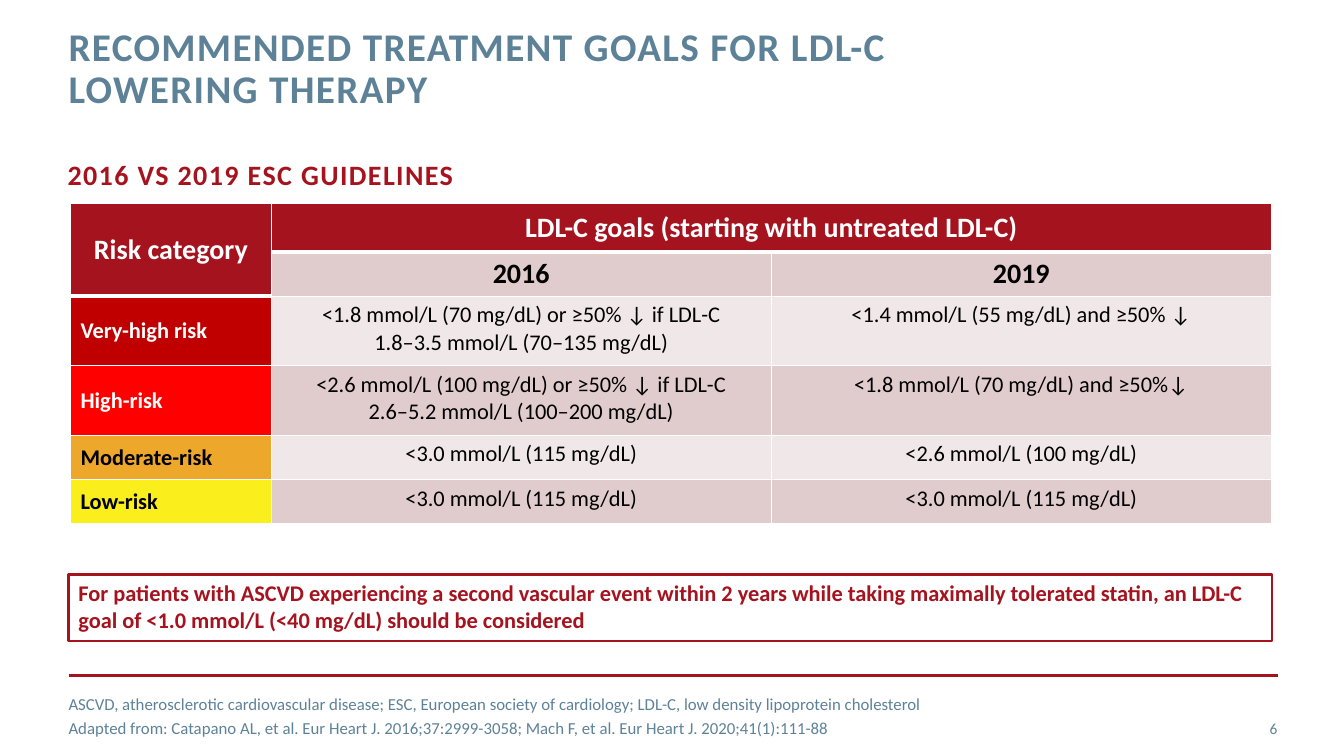
"""Builds a slide comparing the 2016 and 2019 LDL-C treatment goals."""
import pptx
import pptx.dml.color
import pptx.enum.shapes
import pptx.enum.text
import pptx.oxml
import pptx.oxml.ns
import pptx.util
from pptx.util import Inches

COLORS = {
    "crimson": "A5131F", "slate": "5D8298", "white": "FFFFFF", "black": "000000",
    "rose": "E1CCCD", "blush": "F0E7E8", "dark_red": "C00000", "red": "FF0000",
    "amber": "EDA82B", "yellow": "FBEE1D",
}
RGB = {name: pptx.dml.color.RGBColor.from_string(value) for name, value in COLORS.items()}
ALIGN = pptx.enum.text.PP_ALIGN
MIDDLE = pptx.enum.text.MSO_ANCHOR.MIDDLE
TOP = pptx.enum.text.MSO_ANCHOR.TOP


def set_text(frame, text, size, color, bold=False, align=ALIGN.LEFT, tracking=0):
    """Fill a text frame and format all of its runs."""
    frame.text = text
    frame.word_wrap = True
    for para in frame.paragraphs:
        para.alignment = align
        for span in para.runs:
            span.font.name = "Calibri"
            span.font.size = pptx.util.Pt(size)
            span.font.bold = bold
            span.font.color.rgb = RGB[color]
            if tracking:
                span.font._element.set("spc", str(tracking))


def add_text(left, top, width, height, text, size, color, anchor=TOP, **style):
    """Add a text box without margins and return its frame."""
    box = page.shapes.add_textbox(Inches(left), Inches(top), Inches(width), Inches(height))
    frame = box.text_frame
    frame.margin_left = frame.margin_right = frame.margin_top = frame.margin_bottom = 0
    frame.vertical_anchor = anchor
    set_text(frame, text, size, color, **style)
    return frame


deck = pptx.Presentation()
deck.slide_width, deck.slide_height = Inches(13.33), Inches(7.5)
page = deck.slides.add_slide(deck.slide_layouts[6])

rule = page.shapes.add_connector(
    pptx.enum.shapes.MSO_CONNECTOR.STRAIGHT,
    Inches(0.68), Inches(6.7), Inches(12.68), Inches(6.7))
rule.line.color.rgb = RGB["crimson"]
rule.line.width = pptx.util.Pt(2)
rule._element.spPr.append(pptx.oxml.parse_xml(
    f'<a:effectLst {pptx.oxml.ns.nsdecls("a")}/>'))

title = add_text(0.68, 0.27, 9.56, 0.88,
                 "RECOMMENDED TREATMENT GOALS FOR LDL-C LOWERING THERAPY",
                 28, "slate", bold=True, tracking=100)
title.paragraphs[0].line_spacing = pptx.util.Pt(30)
add_text(0.67, 1.56, 12, 0.4, "2016 VS 2019 ESC GUIDELINES",
         20, "crimson", bold=True, tracking=100)
footnotes = add_text(
    0.68, 6.9, 8.88, 0.4,
    "ASCVD, atherosclerotic cardiovascular disease; ESC, European society of cardiology; "
    "LDL-C, low density lipoprotein cholesterol\n"
    "Adapted from: Catapano AL, et al. Eur Heart J. 2016;37:2999-3058; "
    "Mach F, et al. Eur Heart J. 2020;41(1):111-88",
    12, "slate", anchor=MIDDLE)
footnotes.paragraphs[1].space_before = pptx.util.Pt(3)
add_text(11.81, 7.03, 0.86, 0.4, "6", 11, "slate", anchor=MIDDLE, align=ALIGN.RIGHT)

ROWS = [
    ("Risk category", "LDL-C goals (starting with untreated LDL-C)", ""),
    ("", "2016", "2019"),
    ("Very-high risk",
     "<1.8 mmol/L (70 mg/dL) or ≥50% ↓ if LDL-C\n1.8–3.5 mmol/L (70–135 mg/dL)",
     "<1.4 mmol/L (55 mg/dL) and ≥50% ↓"),
    ("High-risk",
     "<2.6 mmol/L (100 mg/dL) or ≥50% ↓ if LDL-C\n2.6–5.2 mmol/L (100–200 mg/dL)",
     "<1.8 mmol/L (70 mg/dL) and ≥50%↓"),
    ("Moderate-risk", "<3.0 mmol/L (115 mg/dL)", "<2.6 mmol/L (100 mg/dL)"),
    ("Low-risk", "<3.0 mmol/L (115 mg/dL)", "<3.0 mmol/L (115 mg/dL)"),
]
HEIGHTS = [0.48, 0.44, 0.69, 0.69, 0.44, 0.44]
WIDTHS = [1.99, 4.96, 4.96]
LABEL_FILLS = ["crimson", "crimson", "dark_red", "red", "amber", "yellow"]
GOAL_FILLS = ["crimson", "rose", "blush", "rose", "blush", "rose"]

goals = page.shapes.add_table(len(ROWS), len(WIDTHS), Inches(0.7), Inches(2.02),
                              Inches(sum(WIDTHS)), Inches(sum(HEIGHTS))).table
goals.first_row = goals.horz_banding = False
for column, width in zip(goals.columns, WIDTHS):
    column.width = Inches(width)
for row, height in zip(goals.rows, HEIGHTS):
    row.height = Inches(height)
goals.cell(0, 0).merge(goals.cell(1, 0))
goals.cell(0, 1).merge(goals.cell(0, 2))

for r, texts in enumerate(ROWS):
    for c, text in enumerate(texts):
        cell = goals.cell(r, c)
        header, label = r < 2, c == 0
        heavy_top = r == (2 if label else 1)
        heavy_bottom = r == 0 or (label and r == 1)
        for side, points in (("L", 1), ("R", 1), ("T", 3 if heavy_top else 1),
                             ("B", 3 if heavy_bottom else 1)):
            cell._tc.get_or_add_tcPr().append(pptx.oxml.parse_xml(
                f'<a:ln{side} {pptx.oxml.ns.nsdecls("a")} w="{points * 12700}"><a:solidFill>'
                f'<a:srgbClr val="{COLORS["white"]}"/></a:solidFill></a:ln{side}>'))
        cell.fill.solid()
        cell.fill.fore_color.rgb = RGB[(LABEL_FILLS if label else GOAL_FILLS)[r]]
        cell.vertical_anchor = MIDDLE if header or label else TOP
        if text:
            light = r == 0 or (label and r < 4)
            set_text(cell.text_frame, text, 20 if header else 16,
                     "white" if light else "black", bold=header or label,
                     align=ALIGN.LEFT if label and not header else ALIGN.CENTER)

callout = page.shapes.add_shape(pptx.enum.shapes.MSO_SHAPE.RECTANGLE,
                                Inches(0.68), Inches(5.7), Inches(11.94), Inches(0.66))
callout.shadow.inherit = False
callout.fill.background()
callout.line.color.rgb = RGB["crimson"]
callout.line.width = pptx.util.Pt(1.5)
callout.text_frame.vertical_anchor = TOP
set_text(callout.text_frame,
         "For patients with ASCVD experiencing a second vascular event within 2 years while "
         "taking maximally tolerated statin, an LDL-C goal of <1.0 mmol/L (<40 mg/dL) "
         "should be considered", 16, "crimson", bold=True)

deck.save("out.pptx")
